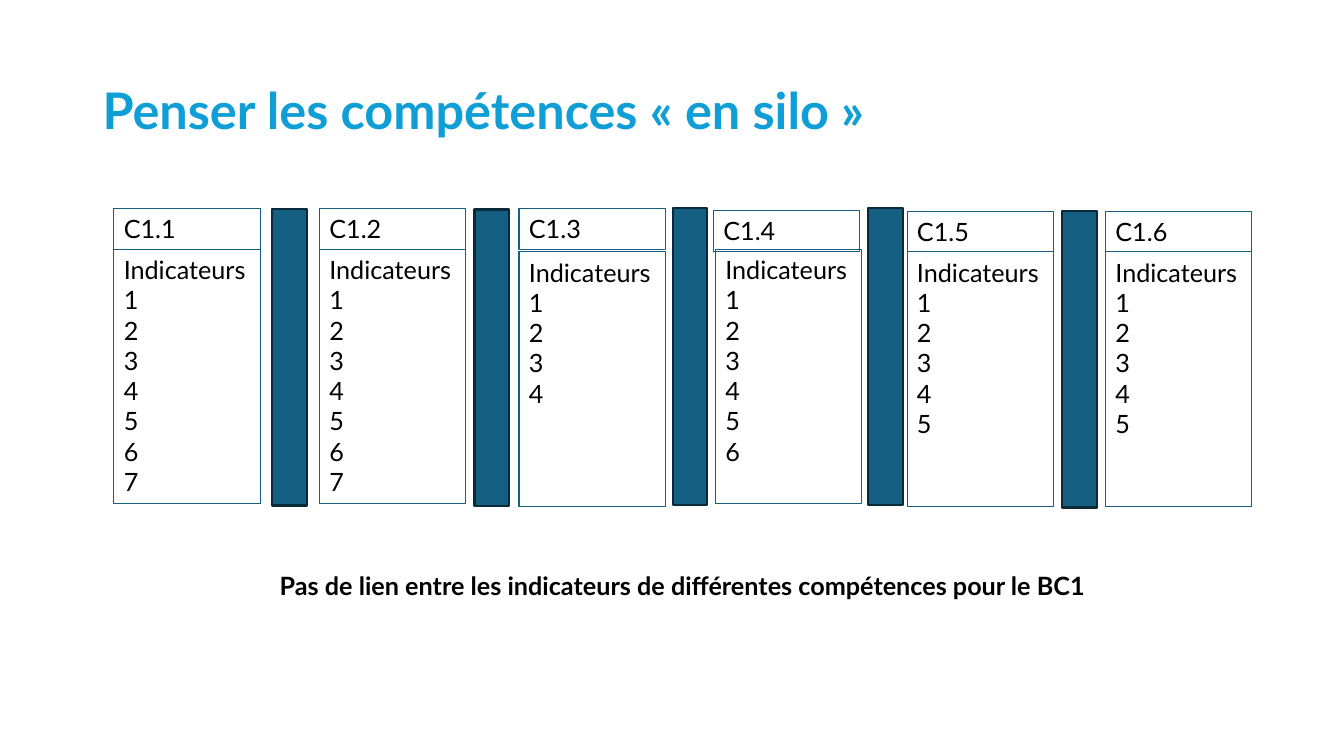
from pptx import Presentation
from pptx.dml.color import RGBColor
from pptx.enum.shapes import MSO_SHAPE as Shape
from pptx.enum.text import MSO_ANCHOR as Anchor, MSO_AUTO_SIZE as Fit, PP_ALIGN as Align
from pptx.util import Cm, Pt

FONT = "Lato"
SKY = RGBColor(0x0F, 0x9E, 0xD5)
TEAL = RGBColor(0x15, 0x60, 0x82)
NAVY = RGBColor(0x09, 0x2A, 0x39)
BLACK = RGBColor(0, 0, 0)

WIDTH, HEAD, BODY = 3.69, 1.03, 6.41

# Head left, head top, body left, body top (cm), number of indicators
SILOS = [
    (2.87, 5.26, 2.87, 6.29, 7),
    (8.05, 5.26, 8.05, 6.29, 7),
    (13.08, 5.26, 13.08, 6.35, 4),
    (17.98, 5.31, 18.03, 6.29, 6),
    (22.86, 5.32, 22.86, 6.35, 5),
    (27.86, 5.32, 27.86, 6.35, 5),
]
# Left, top (cm)
WALLS = [(6.86, 5.26), (11.96, 5.28), (16.95, 5.24), (21.88, 5.24), (26.77, 5.31)]


def place(shape, left, top, width, height):
    shape.left, shape.top = Cm(left), Cm(top)
    shape.width, shape.height = Cm(width), Cm(height)


def write(shape, lines, size=18, color=BLACK, bold=False, align=Align.LEFT, anchor=Anchor.TOP):
    frame = shape.text_frame
    frame.text = "\n".join(lines)
    frame.word_wrap = True
    frame.auto_size = Fit.NONE
    frame.vertical_anchor = anchor
    for para in frame.paragraphs:
        para.alignment = align
        font = para.font
        font.name, font.size, font.bold = FONT, Pt(size), bold
        font.color.rgb = color


def add_rect(slide, left, top, width, height, line, weight, fill=None):
    rect = slide.shapes.add_shape(
        Shape.RECTANGLE, Cm(left), Cm(top), Cm(width), Cm(height))
    rect.shadow.inherit = False
    rect.line.color.rgb = line
    rect.line.width = Pt(weight)
    if fill is None:
        rect.fill.background()
    else:
        rect.fill.solid()
        rect.fill.fore_color.rgb = fill
    return rect


def add_card(slide, left, top, height, lines):
    write(add_rect(slide, left, top, WIDTH, height, TEAL, 0.75), lines)


def add_silo(slide, name, left, top, inner, below, count):
    add_card(slide, left, top, HEAD, [name])
    marks = [str(n) for n in range(1, count + 1)]
    add_card(slide, inner, below, BODY, ["Indicateurs"] + marks)


def main():
    deck = Presentation()
    deck.slide_width, deck.slide_height = Cm(33.87), Cm(19.05)
    slide = deck.slides.add_slide(deck.slide_layouts[5])

    # Title
    title = slide.shapes.title
    place(title, 2.33, 1.01, 29.21, 3.68)
    write(title, ["Penser les compétences « en silo »"], 36, SKY, True, anchor=Anchor.MIDDLE)
    title.text_frame.paragraphs[0].line_spacing = 0.9

    # Skills with their indicators
    for index, silo in enumerate(SILOS, 1):
        add_silo(slide, f"C1.{index}", *silo)

    # Walls between the skills
    for left, top in WALLS:
        add_rect(slide, left, top, 0.88, 7.48, NAVY, 1.5, TEAL)

    # Conclusion
    note = slide.shapes.add_textbox(Cm(2.87), Cm(14.25), Cm(28.65), Cm(1.03))
    write(note, ["Pas de lien entre les indicateurs de différentes compétences pour le BC1"],
          bold=True, align=Align.CENTER)

    deck.save("out.pptx")


if __name__ == "__main__":
    main()
